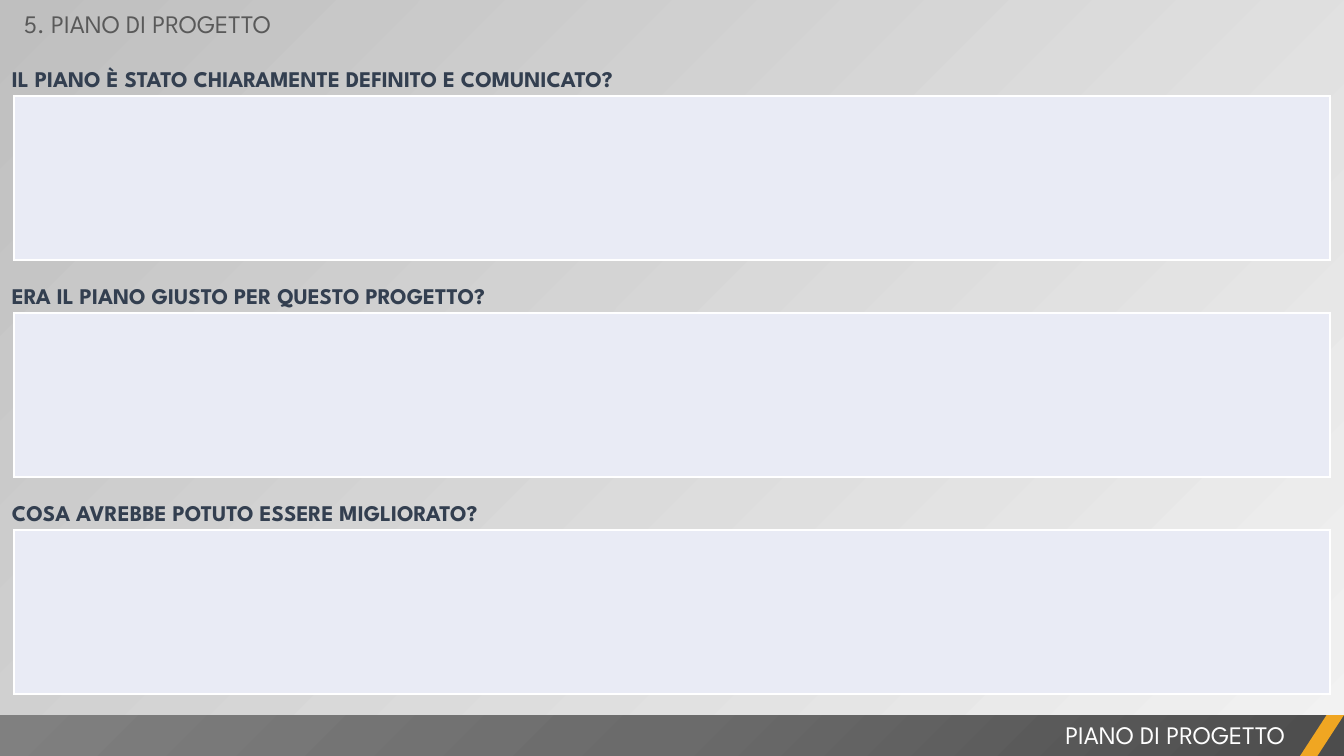
from dataclasses import dataclass

from pptx import Presentation
from pptx import util as u
from pptx.dml.color import RGBColor
from pptx.enum import shapes, text
from pptx.oxml import parse_xml
from pptx.oxml.ns import nsdecls

WIDE, HIGH = 1344, 756
SCALE = 12192000 / WIDE


@dataclass(frozen=True)
class Theme:
    font: str = "League Spartan"
    title: int = 18
    label: int = 16
    light: str = "F2F2F2"
    dark: str = "BFBFBF"
    grey: str = "595959"
    navy: str = "333F50"
    white: str = "FFFFFF"
    panel: str = "E9EBF5"
    accent: str = "F0A622"
    bar: tuple = ((0, "4C4C4C"), (50, "6B6B6B"), (100, "808080"))


THEME = Theme()
QUESTIONS = (
    "IL PIANO È STATO CHIARAMENTE DEFINITO E COMUNICATO?",
    "ERA IL PIANO GIUSTO PER QUESTO PROGETTO?",
    "COSA AVREBBE POTUTO ESSERE MIGLIORATO?",
)


def px(*sizes):
    return [u.Emu(round(size * SCALE)) for size in sizes]


def rgb(code):
    return RGBColor.from_string(code)


def add_text(slide, box, words, size, color, bold=False, align=None, inset=None):
    """Place one line of text; inset is a (side, top) pair."""
    frame = slide.shapes.add_textbox(*px(*box)).text_frame
    frame.word_wrap = True
    frame.auto_size = text.MSO_AUTO_SIZE.SHAPE_TO_FIT_TEXT
    if inset:
        side, top = px(*inset)
        frame.margin_left = frame.margin_right = side
        frame.margin_top = frame.margin_bottom = top
    para = frame.paragraphs[0]
    para.text = words
    para.alignment = align
    font = para.font
    font.name, font.size, font.bold = THEME.font, u.Pt(size), bold
    font.color.rgb = rgb(color)
    return para


def add_panel(slide, box):
    """Place a one-cell table for the answer."""
    table = slide.shapes.add_table(1, 1, *px(*box)).table
    table.first_row = table.horz_banding = False
    cell = table.cell(0, 0)
    props = cell._tc.get_or_add_tcPr()
    for side in ("lnL", "lnR", "lnT", "lnB"):
        props.append(parse_xml(
            f'<a:{side} {nsdecls("a")} w="12700"><a:solidFill>'
            f'<a:srgbClr val="{THEME.white}"/></a:solidFill></a:{side}>'))
    cell.fill.solid()
    cell.fill.fore_color.rgb = rgb(THEME.panel)


def add_question(slide, box, words):
    left, top, width, height = box
    head = 40
    para = add_text(slide, (left, top, 769, head), words, THEME.label,
                    THEME.navy, bold=True, inset=(12, 6))
    para.line_spacing = u.Pt(21.5)
    para.space_before = u.Pt(3)
    add_panel(slide, (left + 14, top + head, width - 28, height - head))


def add_form(slide, box):
    left, top, width, height = box
    gap = 13
    step = (height + gap) // len(QUESTIONS)
    for row, words in enumerate(QUESTIONS):
        add_question(slide, (left, top + row * step, width, step - gap), words)


def add_plain(slide, kind, box):
    shape = slide.shapes.add_shape(kind, *px(*box))
    shape.shadow.inherit = False
    shape.line.fill.background()
    return shape


def fill_bar(shape):
    """Give the shape a round gradient centred on its lower right corner."""
    stops = "".join(
        f'<a:gs pos="{pos * 1000}"><a:srgbClr val="{color}"/></a:gs>'
        for pos, color in THEME.bar)
    shape.fill.gradient()
    old = shape._element.spPr.find(".//{*}gradFill")
    old.getparent().replace(old, parse_xml(
        f'<a:gradFill {nsdecls("a")}><a:gsLst>{stops}</a:gsLst>'
        '<a:path path="circle"><a:fillToRect l="100000" t="100000"/></a:path>'
        '</a:gradFill>'))


def add_footer(slide, box):
    left, top, width, height = box
    kinds = shapes.MSO_SHAPE
    fill_bar(add_plain(slide, kinds.RECTANGLE, box))
    add_text(slide, (left + 529, top - 1, 766, 40), "PIANO DI PROGETTO",
             THEME.title, THEME.white, align=text.PP_ALIGN.RIGHT)
    slash = add_plain(slide, kinds.PARALLELOGRAM,
                      (left + width - 44, top, 44, height))
    slash.adjustments[0] = 0.65
    slash.fill.solid()
    slash.fill.fore_color.rgb = rgb(THEME.accent)


def paint_back(slide):
    fill = slide.background.fill
    fill.gradient()
    fill.gradient_angle = 135
    for stop, color in zip(fill.gradient_stops, (THEME.light, THEME.dark)):
        stop.color.rgb = rgb(color)


def main():
    deck = Presentation()
    deck.slide_width, deck.slide_height = px(WIDE, HIGH)
    slide = deck.slides.add_slide(deck.slide_layouts[6])
    paint_back(slide)
    add_form(slide, (0, 56, WIDE, 638))
    add_footer(slide, (0, 715, WIDE, 41))
    add_text(slide, (14, 3, 535, 40), "5. PIANO DI PROGETTO",
             THEME.title, THEME.grey)
    deck.save("out.pptx")


if __name__ == "__main__":
    main()
